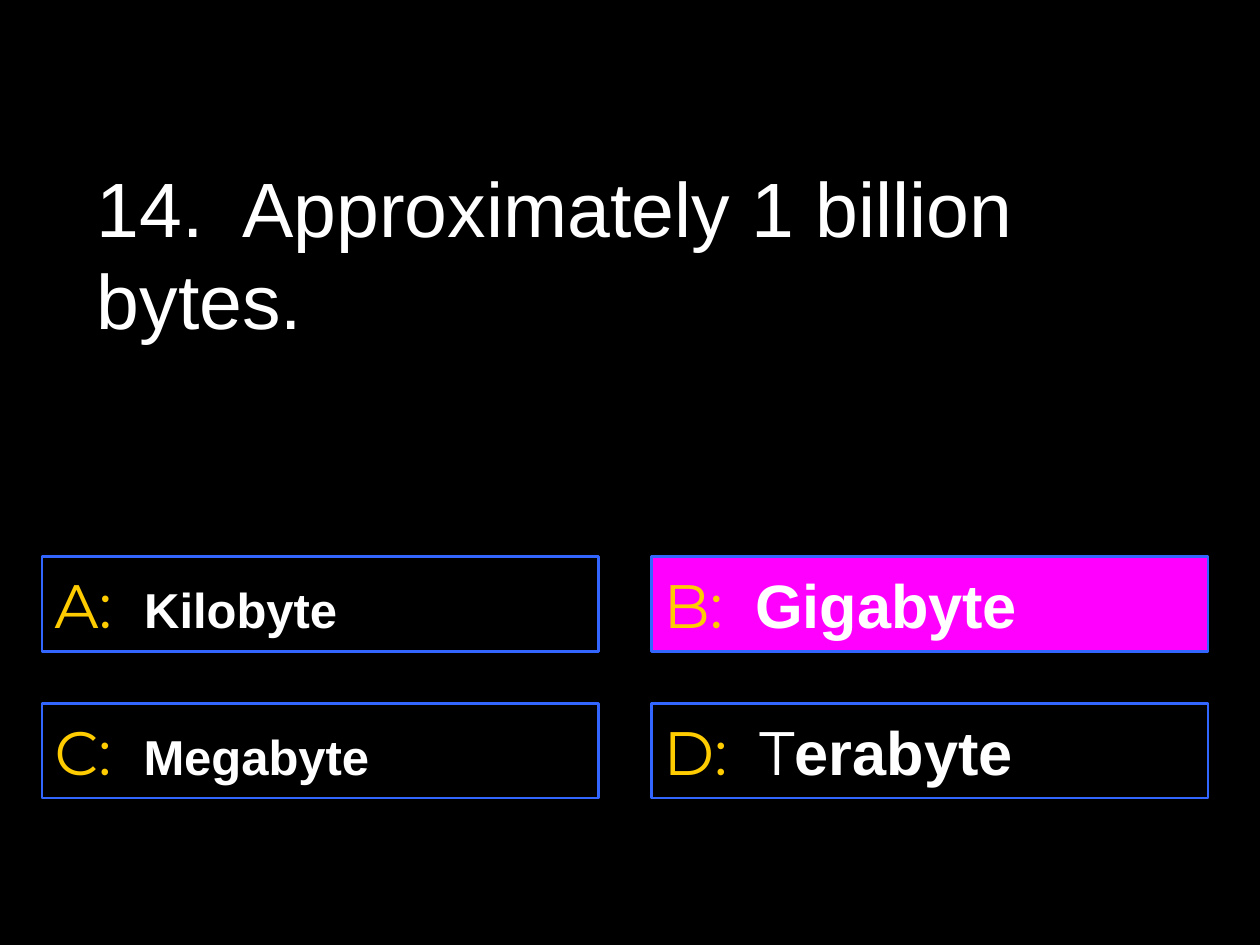
from lxml import etree
from pptx import Presentation
from pptx import util as u
from pptx.dml.color import RGBColor
from pptx.enum import shapes, text
from pptx.oxml.ns import qn

HUES = {
    "black": "000000",
    "white": "FFFFFF",
    "gold": "FFCC00",
    "blue": "3366FF",
    "pink": "FF00FF",
}


def hue(name):
    return RGBColor.from_string(HUES[name])


def write(para, words, size=35, font="Arial", color="white", bold=False):
    run = para.add_run()
    run.text = words
    run.font.size = u.Pt(size)
    run.font.name = font
    run.font.color.rgb = hue(color)
    run.font.bold = bold


# Slide with a black background
deck = Presentation()
deck.slide_width, deck.slide_height = u.Cm(25.4), u.Cm(19.05)
slide = deck.slides.add_slide(deck.slide_layouts[5])
slide.background.fill.solid()
slide.background.fill.fore_color.rgb = hue("black")

# Question
title = slide.shapes.title
title.left, title.top = u.Cm(1.7), u.Cm(1.7)
title.width, title.height = u.Cm(21.59), u.Cm(6.78)
frame = title.text_frame
frame.word_wrap = True
frame.auto_size = text.MSO_AUTO_SIZE.NONE
frame.vertical_anchor = text.MSO_ANCHOR.MIDDLE
para = frame.paragraphs[0]
para.alignment = text.PP_ALIGN.LEFT
write(para, "14.  Approximately 1 billion bytes.", size=44)

# Answers in a two by two grid: letter, plain start, bold rest, size, fill
answers = [
    ("A", "", "Kilobyte", 28, "black"),
    ("B", "", "Gigabyte", 35, "pink"),
    ("C", "", "Megabyte", 28, "black"),
    ("D", "T", "erabyte", 35, "black"),
]
for i, (letter, start, rest, size, fill) in enumerate(answers):
    row, col = divmod(i, 2)
    box = slide.shapes.add_shape(
        shapes.MSO_SHAPE.RECTANGLE,
        u.Cm(0.85 + 12.28 * col), u.Cm(11.22 + 2.96 * row),
        u.Cm(11.22), u.Cm(1.91))
    box.shadow.inherit = False
    box.fill.solid()
    box.fill.fore_color.rgb = hue(fill)
    if fill == "black":
        # Half transparent fill
        tint = box.fill._xPr.find(qn("a:solidFill"))[0]
        etree.SubElement(tint, qn("a:alpha")).set("val", "50000")
    box.line.color.rgb = hue("blue")
    box.line.width = u.Pt(1.5)

    frame = box.text_frame
    frame.word_wrap = False
    frame.vertical_anchor = text.MSO_ANCHOR.MIDDLE
    para = frame.paragraphs[0]
    para.alignment = text.PP_ALIGN.LEFT
    write(para, f"{letter}:  ", font="Montserrat", color="gold")
    if start:
        write(para, start, font="Montserrat")
    write(para, rest, size=size, bold=True)

deck.save("out.pptx")
